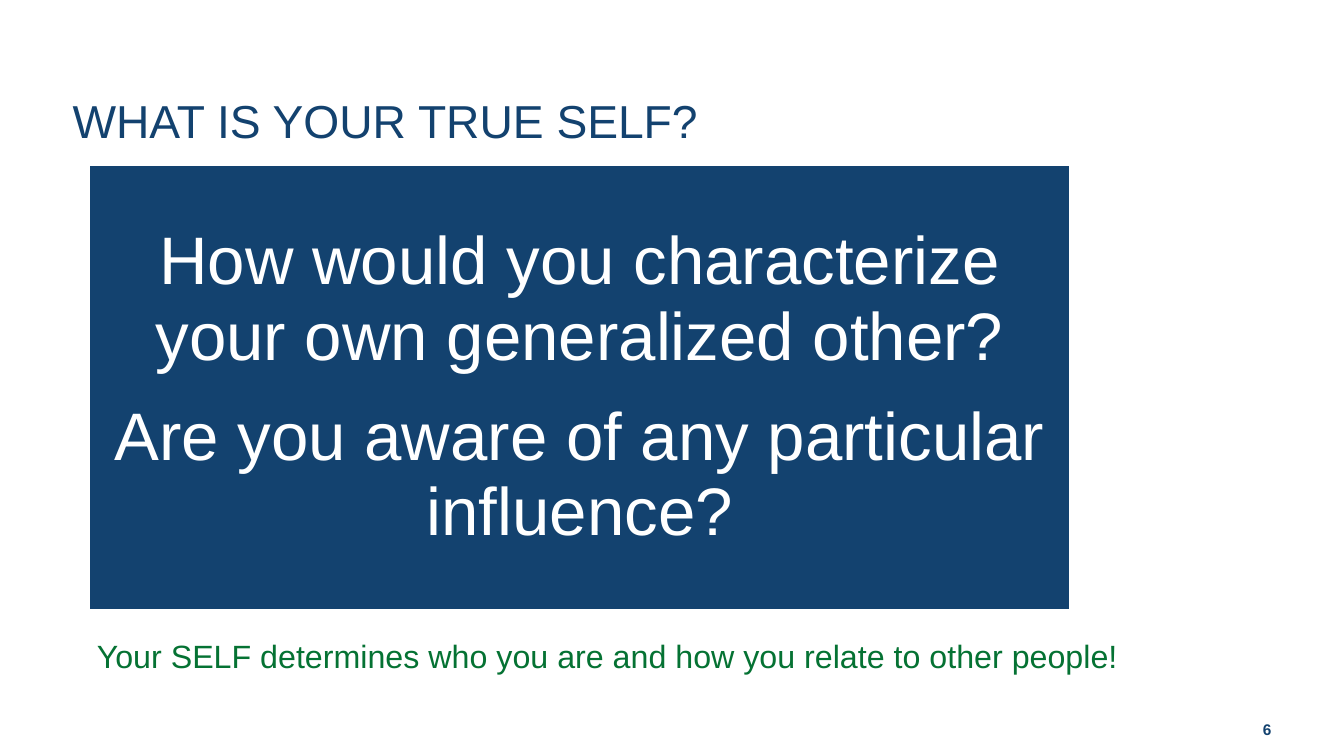
from dataclasses import dataclass
from pptx import Presentation
from pptx.dml.color import RGBColor
from pptx.enum.shapes import MSO_SHAPE
from pptx.enum.text import MSO_ANCHOR, PP_ALIGN
from pptx.util import Inches, Pt


@dataclass(frozen=True)
class Theme:
    font: str = "Arial"
    navy: str = "13426F"
    green: str = "057233"
    white: str = "FFFFFF"
    title: int = 33
    quote: int = 48
    note: int = 23
    page: int = 11


THEME = Theme()


def write(shape, lines, size, color, pads, anchor, align=PP_ALIGN.LEFT,
          lead=1.0, gap=0, bold=False):
    frame = shape.text_frame
    frame.word_wrap = True
    frame.vertical_anchor = anchor
    (frame.margin_left, frame.margin_top,
     frame.margin_right, frame.margin_bottom) = map(Inches, pads)
    frame.text = "\n".join(lines)
    for para in frame.paragraphs:
        para.alignment = align
        para.line_spacing = lead
        para.space_after = Pt(gap)
        for run in para.runs:
            run.font.name = THEME.font
            run.font.size = Pt(size)
            run.font.bold = bold
            run.font.color.rgb = RGBColor.from_string(color)


def add_label(slide, area, *args, **style):
    box = slide.shapes.add_textbox(*map(Inches, area))
    write(box, *args, **style)


def add_panel(slide, area, lines):
    panel = slide.shapes.add_shape(MSO_SHAPE.RECTANGLE, *map(Inches, area))
    panel.shadow.inherit = False
    panel.fill.solid()
    panel.fill.fore_color.rgb = RGBColor.from_string(THEME.navy)
    panel.line.color.rgb = RGBColor.from_string(THEME.white)
    panel.line.width = Pt(2)
    write(panel, lines, THEME.quote, THEME.white, (0.2, 0.2, 0.2, 0.2),
          MSO_ANCHOR.MIDDLE, PP_ALIGN.CENTER, lead=0.94, gap=17)


def main():
    deck = Presentation()
    deck.slide_width, deck.slide_height = Inches(13.33), Inches(7.5)
    slide = deck.slides.add_slide(deck.slide_layouts[6])
    add_label(slide, (0.01, 0.74, 11.49, 0.88), ["WHAT IS YOUR TRUE SELF?"],
              THEME.title, THEME.navy, (0.71, 0.05, 0.1, 0.05),
              MSO_ANCHOR.MIDDLE, lead=1.03)
    add_panel(slide, (0.88, 1.63, 9.74, 4.43), [
        "How would you characterize your own generalized other?",
        "Are you aware of any particular influence?",
    ])
    add_label(slide, (0, 6.24, 11.32, 0.51),
              ["Your SELF determines who you are and how you relate to other people!"],
              THEME.note, THEME.green, (0.96, 0, 0, 0), MSO_ANCHOR.TOP, lead=1.2)
    add_label(slide, (10.32, 6.89, 3, 0.6), ["6"], THEME.page, THEME.navy,
              (0, 0.05, 0.71, 0.16), MSO_ANCHOR.BOTTOM, PP_ALIGN.RIGHT,
              lead=1.21, bold=True)
    deck.save("out.pptx")


if __name__ == "__main__":
    main()
